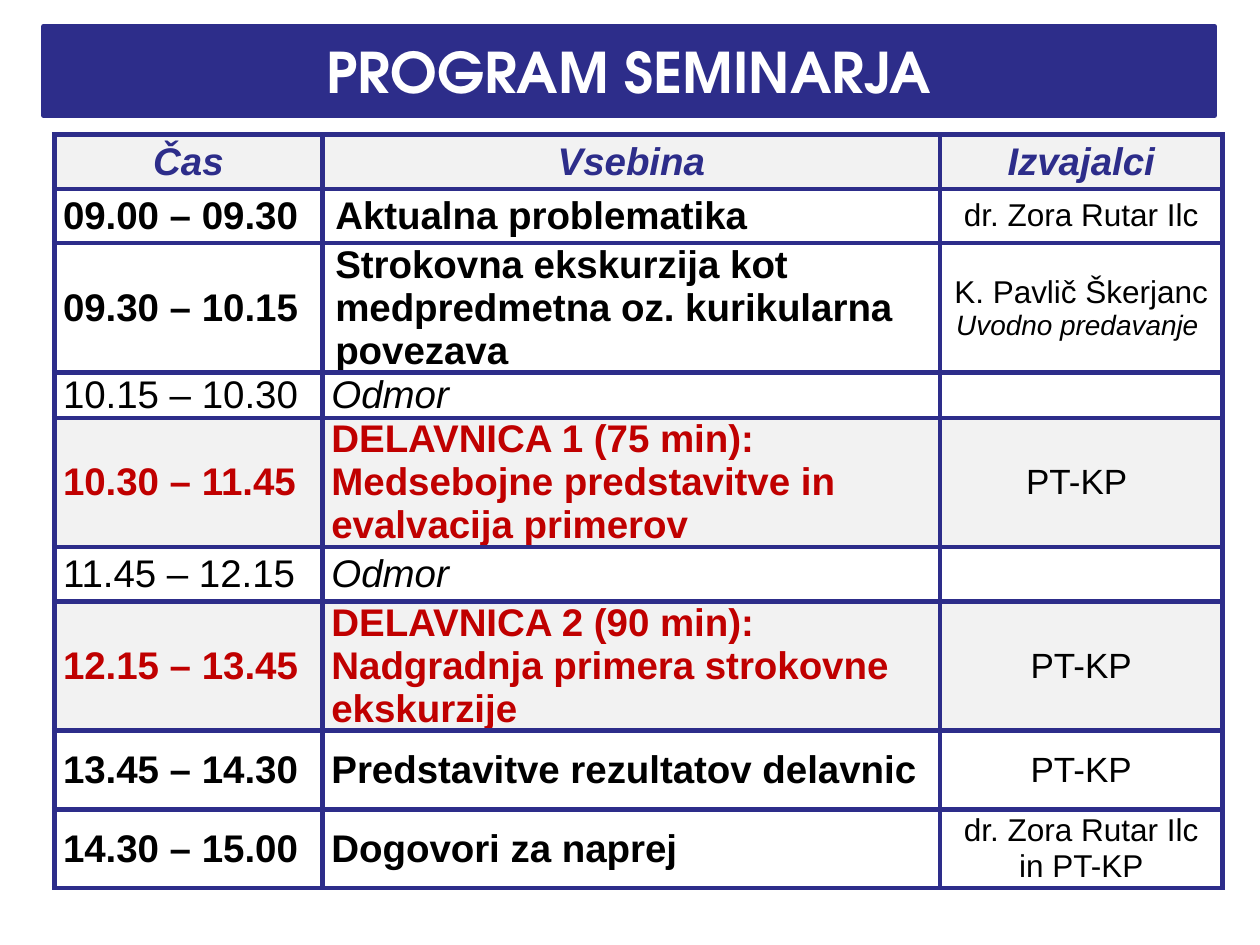
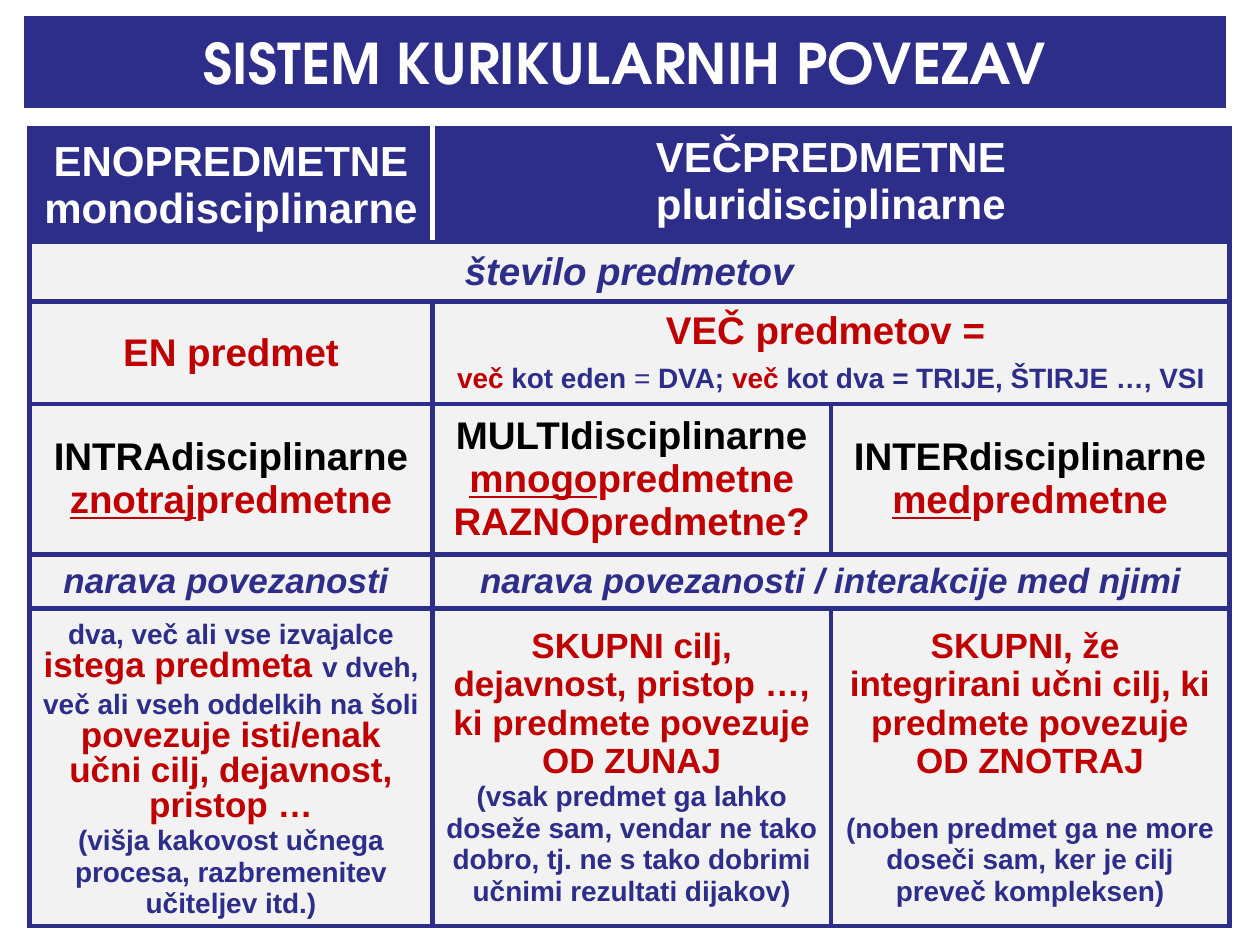
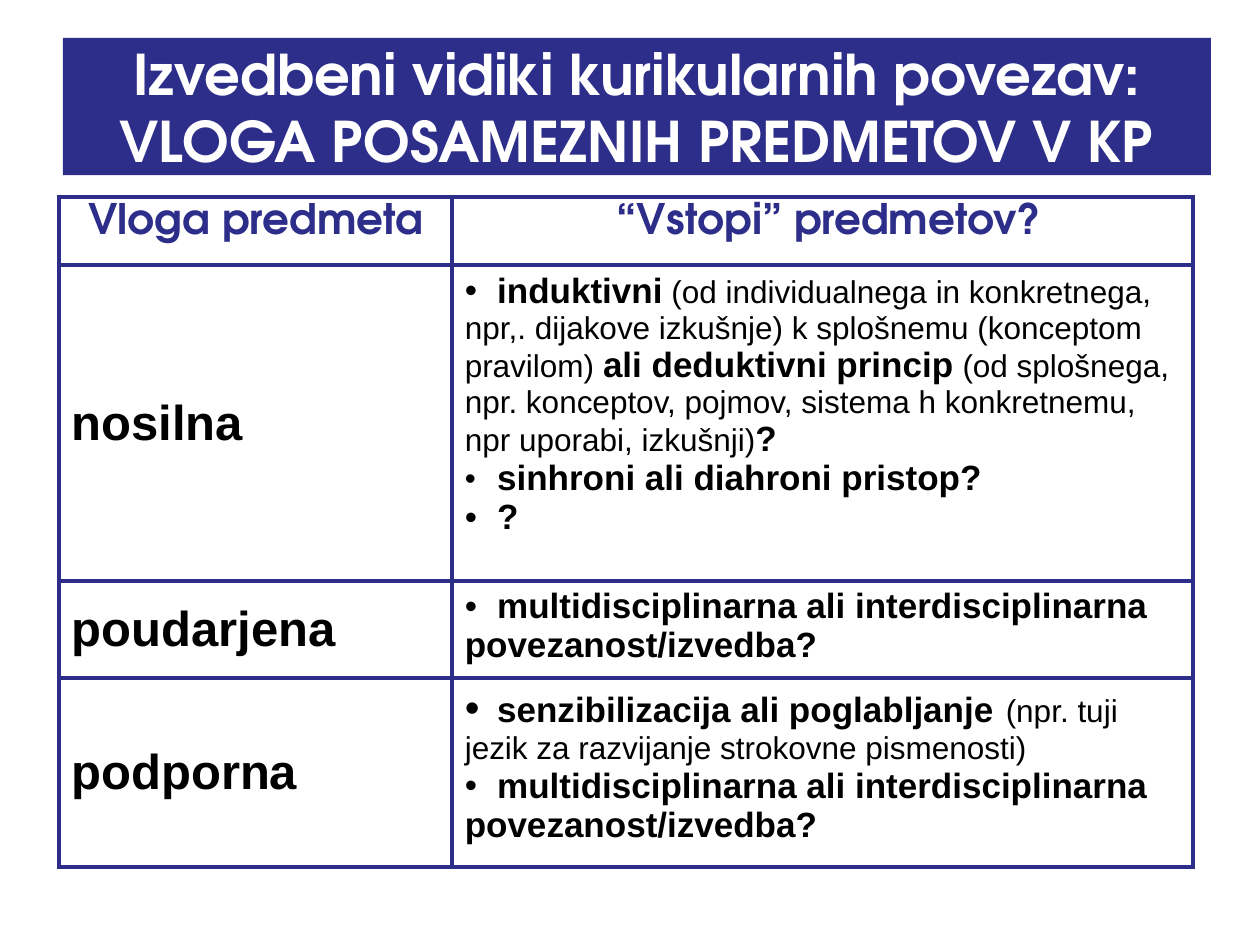
from dataclasses import dataclass

import lxml.etree
import pptx
import pptx.dml.color
import pptx.enum.shapes
import pptx.enum.text
import pptx.oxml.ns
import pptx.util

NAVY = "2D2D8A"
RED = "C00000"
BLACK = "000000"
WHITE = "FFFFFF"
GREY = "F2F2F2"
BODY_FONT = "Arial"
TITLE_FONT = "TeX Gyre Adventor"
BORDER = 3
TAB_STOP = 18.5
Pt = pptx.util.Pt
ALIGN = pptx.enum.text.PP_ALIGN
ANCHOR = pptx.enum.text.MSO_ANCHOR


@dataclass
class Span:
    text: str
    size: float
    color: str = BLACK
    style: str = "b"
    font: str = BODY_FONT


@dataclass
class Para:
    spans: list
    centred: bool = True
    leading: float = 0
    before: float = 0
    bullet: bool = False


@dataclass
class Cell:
    paras: list
    fill: str = WHITE
    middle: bool = True
    inset: tuple = (7.2, 3.6)


def rgb(value):
    return pptx.dml.color.RGBColor.from_string(value)


def add_element(parent, tag, **attributes):
    return lxml.etree.SubElement(parent, pptx.oxml.ns.qn(tag), attributes)


def style_span(run, span):
    font = run.font
    font.name = span.font
    font.size = Pt(span.size)
    font.color.rgb = rgb(span.color)
    font.bold = "b" in span.style
    font.italic = "i" in span.style
    font.underline = "u" in span.style


def add_bullet(paragraph):
    properties = paragraph._p.get_or_add_pPr()
    properties.set("marL", "0")
    properties.set("indent", "0")
    add_element(properties, "a:buFont", typeface=BODY_FONT)
    add_element(properties, "a:buChar", char="•")
    stops = add_element(properties, "a:tabLst")
    add_element(stops, "a:tab", pos=str(Pt(TAB_STOP)), algn="l")


def write_paras(frame, paras):
    for index, para in enumerate(paras):
        paragraph = frame.add_paragraph() if index else frame.paragraphs[0]
        if para.bullet:
            add_bullet(paragraph)
        paragraph.alignment = ALIGN.CENTER if para.centred else ALIGN.LEFT
        if para.leading:
            paragraph.line_spacing = Pt(para.leading)
        if para.before:
            paragraph.space_before = Pt(para.before)
        for span in para.spans:
            run = paragraph.add_run()
            run.text = span.text
            style_span(run, span)


def set_borders(cell, colors):
    properties = cell._tc.get_or_add_tcPr()
    for side in "LRTB":
        line = add_element(properties, f"a:ln{side}", w=str(Pt(BORDER)))
        fill = add_element(line, "a:solidFill")
        add_element(fill, "a:srgbClr", val=colors.get(side, NAVY))


def title_band(page, box, lines, border=0):
    band = page.shapes.add_shape(
        pptx.enum.shapes.MSO_SHAPE.RECTANGLE, *(Pt(length) for length in box)
    )
    band.shadow.inherit = False
    band.fill.solid()
    band.fill.fore_color.rgb = rgb(NAVY)
    if border:
        band.line.color.rgb = rgb(NAVY)
        band.line.width = Pt(border)
    else:
        band.line.fill.background()
    frame = band.text_frame
    frame.word_wrap = True
    frame.vertical_anchor = ANCHOR.MIDDLE
    write_paras(frame, [Para([Span(line, 32, WHITE, font=TITLE_FONT)]) for line in lines])


def fill_cell(target, cell, borders):
    set_borders(target, borders)
    target.fill.solid()
    target.fill.fore_color.rgb = rgb(cell.fill)
    target.vertical_anchor = ANCHOR.MIDDLE if cell.middle else ANCHOR.TOP
    side, edge = cell.inset
    target.margin_left = target.margin_right = Pt(side)
    target.margin_top = target.margin_bottom = Pt(edge)
    write_paras(target.text_frame, cell.paras)


def grid_table(page, corner, widths, heights, rows, borders=None):
    borders = borders or {}
    box = (*corner, sum(widths), sum(heights))
    table = page.shapes.add_table(
        len(heights), len(widths), *(Pt(length) for length in box)
    ).table
    table.first_row = table.horz_banding = False
    for column, width in zip(table.columns, widths):
        column.width = Pt(width)
    for line, height in zip(table.rows, heights):
        line.height = Pt(height)
    for row_index, row in enumerate(rows):
        for column_index, cell in enumerate(row):
            target = table.cell(row_index, column_index)
            if cell is None:
                owner = max(i for i in range(column_index) if row[i])
                fill_cell(target, Cell([], row[owner].fill), {})
                if column_index + 1 == len(row) or row[column_index + 1]:
                    table.cell(row_index, owner).merge(target)
            else:
                fill_cell(target, cell, borders.get((row_index, column_index), {}))


def schedule_row(time, content, hosts, color=BLACK, style="b", inset=5):
    fill = GREY if color == RED else WHITE
    return [
        Cell([Para([Span(time, 22, color, style.replace("i", ""))], False)], fill, inset=(5, 0)),
        Cell([Para([Span(content, 22, color, style)], False)], fill, inset=(inset, 0)),
        Cell([Para([host]) for host in hosts], fill, inset=(5, 0)),
    ]


def host(text, size=20, style=""):
    return Span(text, size, BLACK, style)


def program_slide(page):
    title_band(page, (25, 15, 669, 51), ["PROGRAM SEMINARJA"], 3)
    header = [
        Cell([Para([Span(text, 22, NAVY, "bi")])], GREY, inset=(5, 0))
        for text in ("Čas", "Vsebina", "Izvajalci")
    ]
    leader = "dr. Zora Rutar Ilc"
    rows = [
        header,
        schedule_row("09.00 – 09.30", "Aktualna problematika", [host(leader, 18)], inset=7.2),
        schedule_row(
            "09.30 – 10.15",
            "Strokovna ekskurzija kot medpredmetna oz. kurikularna povezava",
            [host("K. Pavlič Škerjanc", 18), host("Uvodno predavanje ", 16, "i")],
            inset=7.2,
        ),
        schedule_row("10.15 – 10.30", "Odmor", [], style="i"),
        schedule_row(
            "10.30 – 11.45",
            "DELAVNICA 1 (75 min): Medsebojne predstavitve in evalvacija primerov",
            [host("PT-KP ")],
            RED,
        ),
        schedule_row("11.45 – 12.15", "Odmor", [], style="i"),
        schedule_row(
            "12.15 – 13.45",
            "DELAVNICA 2 (90 min): Nadgradnja primera strokovne ekskurzije",
            [host("PT-KP")],
            RED,
        ),
        schedule_row("13.45 – 14.30", "Predstavitve rezultatov delavnic", [host("PT-KP")]),
        schedule_row("14.30 – 15.00", "Dogovori za naprej", [host(leader + " in PT-KP", 18)]),
    ]
    heights = [31, 31, 73.5, 26, 73.5, 31, 73.5, 45, 45]
    grid_table(page, (31, 77), [153.4, 352.8, 161.3], heights, rows)


def heading(*lines, middle=True):
    return Cell([Para([Span(line, 24, WHITE)]) for line in lines], NAVY, middle)


def criterion(text, size):
    return Cell([Para([Span(text, size, NAVY, "bi")])], GREY)


def discipline(name, prefix, *extra):
    paras = [
        Para([Span(name, 22)]),
        Para([Span(prefix, 22, RED, "bu"), Span("predmetne", 22, RED)]),
    ]
    return Cell(paras + [Para([Span(line, 22, RED)]) for line in extra], GREY)


def nature(goals, remark, gap=0):
    paras = [Para([Span(goal, 20, RED)], leading=22) for goal in goals]
    return Cell(paras + [Para([Span(remark, 16, NAVY)], leading=18, before=gap)], GREY)


def system_slide(page):
    several = Cell(
        [
            Para([Span("VEČ predmetov = ", 22, RED)], leading=24),
            Para(
                [
                    Span("več", 16, RED),
                    Span(" kot eden ", 16, NAVY),
                    Span("= ", 16, NAVY, ""),
                    Span("DVA; ", 16, NAVY),
                    Span("več", 16, RED),
                    Span(" kot dva ", 16, NAVY),
                    Span("= ", 16, NAVY, "bi"),
                    Span("TRIJE, ŠTIRJE …, VSI", 16, NAVY),
                ],
                leading=24,
            ),
        ],
        GREY,
    )
    within = Cell(
        [
            Para(
                [
                    Span("dva, več ali vse izvajalce ", 16, NAVY),
                    Span("istega predmeta ", 20, RED),
                    Span("v dveh, več ali vseh oddelkih na šoli ", 16, NAVY),
                    Span("povezuje isti/enak učni cilj, dejavnost, pristop …", 20, RED),
                ],
                leading=20,
            ),
            Para(
                [Span("(višja kakovost učnega procesa, razbremenitev učiteljev itd.)", 16, NAVY)],
                leading=18,
            ),
        ],
        GREY,
    )
    rows = [
        [
            heading("ENOPREDMETNE", "monodisciplinarne"),
            heading("VEČPREDMETNE", "pluridisciplinarne", middle=False),
            None,
        ],
        [criterion("število predmetov", 22), None, None],
        [Cell([Para([Span("EN predmet", 22, RED)])], GREY), several, None],
        [
            discipline("INTRAdisciplinarne", "znotraj"),
            discipline("MULTIdisciplinarne", "mnogo", "RAZNOpredmetne?"),
            discipline("INTERdisciplinarne", "med"),
        ],
        [
            criterion("narava povezanosti ", 20),
            criterion("narava povezanosti / interakcije med njimi", 20),
            None,
        ],
        [
            within,
            nature(
                ["SKUPNI cilj, dejavnost, pristop …, ki predmete povezuje OD ZUNAJ"],
                "(vsak predmet ga lahko doseže sam, vendar ne tako dobro, "
                "tj. ne s tako dobrimi učnimi rezultati dijakov)",
            ),
            nature(
                ["SKUPNI, že ", "integrirani učni cilj, ki predmete povezuje OD ZNOTRAJ"],
                "(noben predmet ga ne more doseči sam, ker je cilj preveč kompleksen)",
                18,
            ),
        ],
    ]
    divider = {(0, 0): {"R": WHITE}, (0, 1): {"L": WHITE}}
    heights = [65, 34, 58.5, 86, 31, 181.5]
    grid_table(page, (16.8, 73.3), [230.4, 227.6, 227.6], heights, rows, divider)
    title_band(page, (14, 9.3, 686.5, 52), ["SISTEM KURIKULARNIH POVEZAV"], 0.75)


def question(*spans, tab_size=20):
    return Para([Span("\t", tab_size), *spans], False, bullet=True)


def role_row(role, *questions):
    return [Cell([Para([Span(role, 28)], False)]), Cell(list(questions), middle=False)]


def roles_slide(page):
    header = [
        Cell([Para([Span(text, 24, NAVY, font=TITLE_FONT)])], middle=False)
        for text in ("Vloga predmeta", " “Vstopi” predmetov?")
    ]
    connection = question(
        Span("multidisciplinarna ali interdisciplinarna povezanost/izvedba?", 20)
    )
    principle = question(
        Span("induktivni", 20),
        Span(
            " (od individualnega in konkretnega, npr,. dijakove izkušnje) "
            "k splošnemu (konceptom pravilom) ",
            18,
            style="",
        ),
        Span("ali deduktivni princip", 20),
        Span(
            " (od splošnega, npr. konceptov, pojmov, sistema h konkretnemu, "
            "npr uporabi, izkušnji)",
            18,
            style="",
        ),
        Span("?", 20),
    )
    sensitising = question(
        Span("senzibilizacija ali poglabljanje", 20),
        Span(" ", 24),
        Span("(npr. tuji jezik za razvijanje strokovne pismenosti)", 18, style=""),
        tab_size=24,
    )
    rows = [
        header,
        role_row(
            "nosilna",
            principle,
            question(Span("sinhroni ali diahroni pristop?", 20), tab_size=18),
            question(Span("?", 20)),
        ),
        role_row("poudarjena", connection),
        role_row("podporna", sensitising, connection),
    ]
    grid_table(page, (33.8, 112.5), [224.6, 423.4], [39, 180.5, 55.5, 108], rows)
    title_band(
        page,
        (36, 21.6, 656, 78.5),
        ["Izvedbeni vidiki kurikularnih povezav:", "VLOGA POSAMEZNIH PREDMETOV V KP"],
    )


def main():
    deck = pptx.Presentation()
    deck.slide_width = Pt(720)
    deck.slide_height = Pt(540)
    for build in (program_slide, system_slide, roles_slide):
        build(deck.slides.add_slide(deck.slide_layouts[6]))
    deck.save("out.pptx")


if __name__ == "__main__":
    main()
